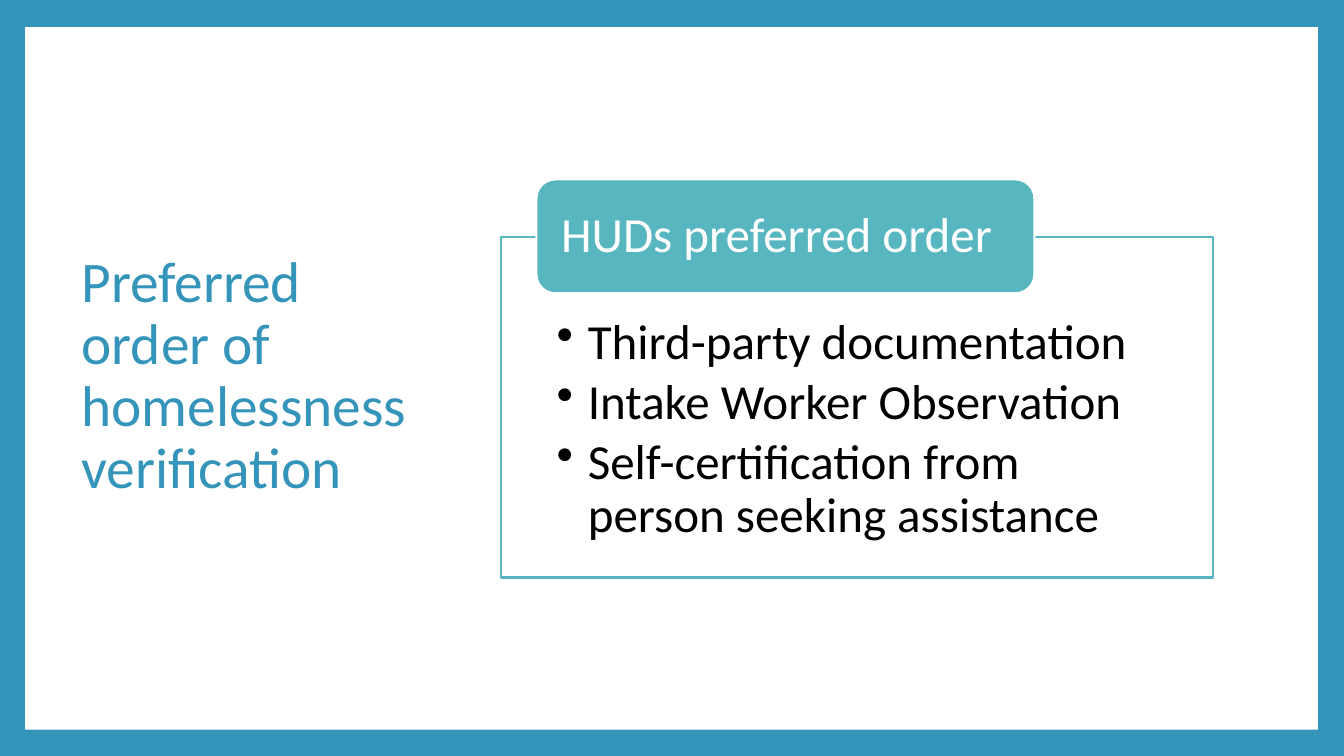
from dataclasses import dataclass

from lxml.etree import SubElement
from pptx import Presentation
from pptx.dml.color import RGBColor
from pptx.enum.shapes import MSO_SHAPE
from pptx.enum.text import MSO_ANCHOR, PP_ALIGN
from pptx.oxml.ns import qn
from pptx.shapes.autoshape import Shape
from pptx.slide import Slide
from pptx.util import Inches, Pt


@dataclass(frozen=True)
class Theme:
    font: str = "Calibri"
    blue: str = "3494BA"
    teal: str = "58B6C0"
    white: str = "FFFFFF"
    black: str = "000000"
    title_size: float = 41
    body_size: float = 35
    line_width: float = 1.5


@dataclass(frozen=True)
class Panel:
    left: float
    top: float
    width: float
    height: float
    fill: str
    line: str | None = None
    kind: MSO_SHAPE = MSO_SHAPE.RECTANGLE
    opacity: int = 100


THEME = Theme()
PAGE = Panel(0.25, 0.27, 12.82, 6.97, THEME.white)
ORDER_FRAME = Panel(4.97, 2.35, 7.06, 3.38, THEME.white, THEME.teal, opacity=90)
ORDER_HEADING = Panel(
    5.32, 1.78, 4.94, 1.13, THEME.teal, THEME.white, MSO_SHAPE.ROUNDED_RECTANGLE
)
PREFERRED_ORDER = [
    "Third-party documentation",
    "Intake Worker Observation",
    "Self-certification from person seeking assistance",
]


def add_panel(slide: Slide, panel: Panel) -> Shape:
    shape = slide.shapes.add_shape(
        panel.kind,
        Inches(panel.left),
        Inches(panel.top),
        Inches(panel.width),
        Inches(panel.height),
    )
    shape.shadow.inherit = False
    shape.fill.solid()
    shape.fill.fore_color.rgb = RGBColor.from_string(panel.fill)
    if panel.opacity < 100:
        color = shape.fill._xPr.find(".//" + qn("a:srgbClr"))
        SubElement(color, qn("a:alpha"), val=str(panel.opacity * 1000))
    if panel.line:
        shape.line.color.rgb = RGBColor.from_string(panel.line)
        shape.line.width = Pt(THEME.line_width)
    else:
        shape.line.fill.background()
    return shape


def write_text(
    shape: Shape,
    lines: list[str],
    *,
    size: float,
    color: str,
    insets: tuple[float, float, float, float],
    anchor: MSO_ANCHOR = MSO_ANCHOR.MIDDLE,
    space_after: float = 0,
    bullet_indent: float = 0,
) -> None:
    frame = shape.text_frame
    frame.word_wrap = True
    frame.vertical_anchor = anchor
    left, top, right, bottom = insets
    frame.margin_left, frame.margin_top = Inches(left), Inches(top)
    frame.margin_right, frame.margin_bottom = Inches(right), Inches(bottom)
    frame.text = "\n".join(lines)
    for paragraph in frame.paragraphs:
        paragraph.alignment = PP_ALIGN.LEFT
        paragraph.line_spacing = 0.9
        paragraph.space_after = Pt(space_after)
        paragraph.font.name = THEME.font
        paragraph.font.size = Pt(size)
        paragraph.font.color.rgb = RGBColor.from_string(color)
        for run in paragraph.runs:
            run.font.name = THEME.font
            run.font.size = Pt(size)
            run.font.color.rgb = RGBColor.from_string(color)
        if bullet_indent:
            properties = paragraph._p.get_or_add_pPr()
            properties.set("marL", str(Inches(bullet_indent)))
            properties.set("indent", str(-Inches(bullet_indent)))
            bullet = properties.makeelement(qn("a:buChar"), {"char": "•"})
            properties.find(qn("a:defRPr")).addprevious(bullet)


def main() -> None:
    presentation = Presentation()
    presentation.slide_width = Inches(13.33)
    presentation.slide_height = Inches(7.5)
    slide = presentation.slides.add_slide(presentation.slide_layouts[6])
    slide.background.fill.solid()
    slide.background.fill.fore_color.rgb = RGBColor.from_string(THEME.blue)

    add_panel(slide, PAGE)
    title = slide.shapes.add_textbox(
        Inches(0.71), Inches(0.67), Inches(3.68), Inches(6.13)
    )
    write_text(
        title,
        ["Preferred order of homelessness verification"],
        size=THEME.title_size,
        color=THEME.blue,
        insets=(0.1, 0.05, 0.1, 0.05),
    )
    write_text(
        add_panel(slide, ORDER_FRAME),
        PREFERRED_ORDER,
        size=THEME.body_size,
        color=THEME.black,
        insets=(0.55, 0.8, 0.55, 0.27),
        anchor=MSO_ANCHOR.TOP,
        space_after=5,
        bullet_indent=0.31,
    )
    write_text(
        add_panel(slide, ORDER_HEADING),
        ["HUDs preferred order"],
        size=THEME.body_size,
        color=THEME.white,
        insets=(0.19, 0, 0.19, 0),
    )
    presentation.save("out.pptx")


if __name__ == "__main__":
    main()
